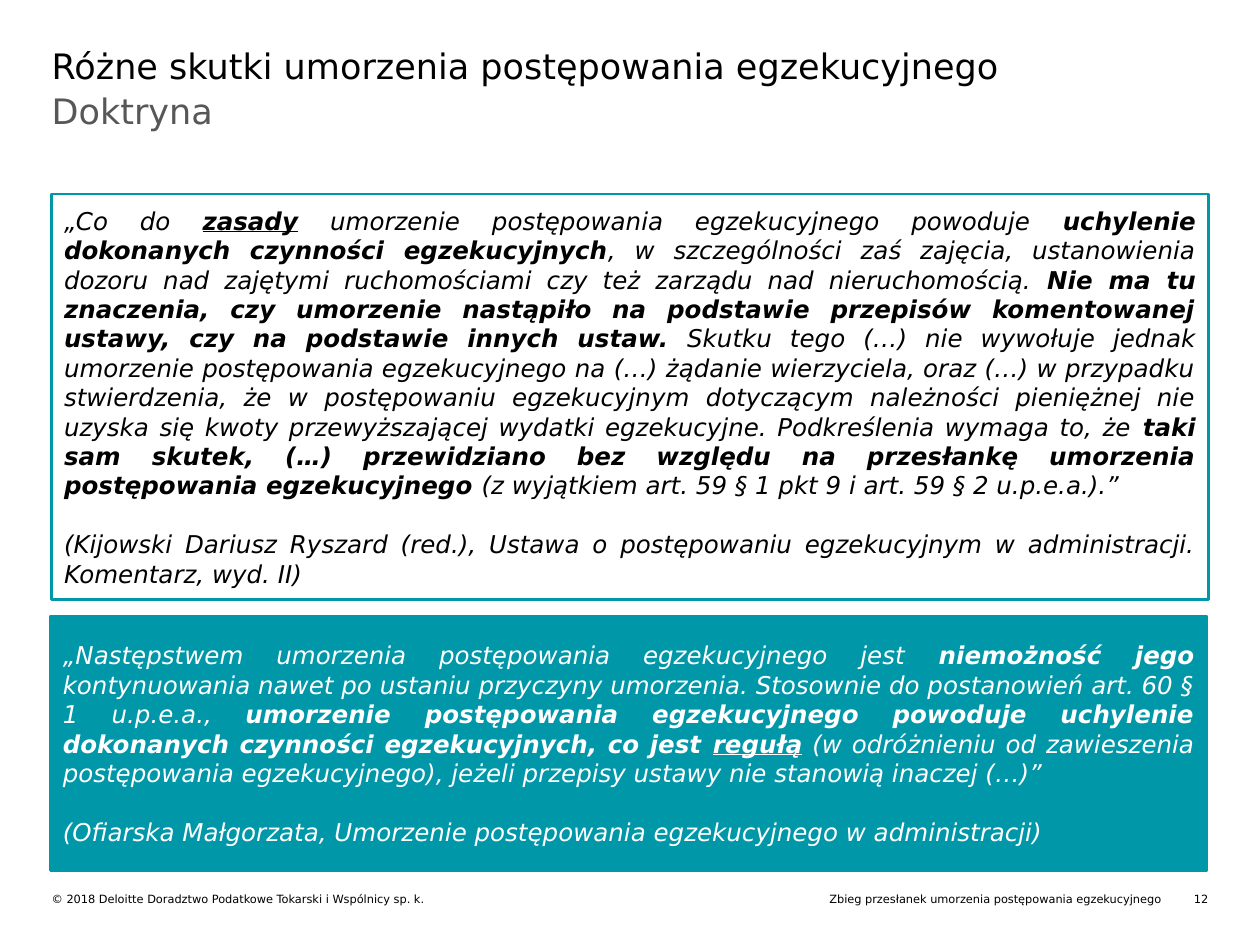
from pptx import Presentation
from pptx.dml.color import RGBColor
from pptx.enum.shapes import MSO_SHAPE
from pptx.enum.text import MSO_ANCHOR, MSO_AUTO_SIZE, PP_ALIGN
from pptx.util import Inches, Pt

PROCESS = MSO_SHAPE.FLOWCHART_PROCESS
TOP, MIDDLE = MSO_ANCHOR.TOP, MSO_ANCHOR.MIDDLE
LEFT, RIGHT, JUSTIFY = PP_ALIGN.LEFT, PP_ALIGN.RIGHT, PP_ALIGN.JUSTIFY

THEME = {
    "font": "DejaVu Sans",
    "black": RGBColor(0x00, 0x00, 0x00),
    "grey": RGBColor(0x57, 0x57, 0x57),
    "white": RGBColor(0xFF, 0xFF, 0xFF),
    "teal": RGBColor(0x00, 0x97, 0xA9),
    "heading": Pt(20),
    "quote": Pt(14),
    "footer": Pt(6.5),
    "source_gap": Pt(16.8),
    "border": Pt(1.5),
}

TITLE = "Różne skutki umorzenia postępowania egzekucyjnego"
SUBTITLE = "Doktryna"

PLAIN, BOLD, KEY = "plain", "bold", "key"
QUOTES = [
    {
        "at": (0.41, 1.54, 9.18, 3.22),
        "fill": None,
        "color": "black",
        "quote": [
            ("„Co do ", PLAIN),
            ("zasady", KEY),
            (" umorzenie postępowania egzekucyjnego powoduje ", PLAIN),
            ("uchylenie dokonanych czynności egzekucyjnych", BOLD),
            (", w szczególności zaś zajęcia, ustanowienia dozoru nad zajętymi "
             "ruchomościami czy też zarządu nad nieruchomością. ", PLAIN),
            ("Nie ma tu znaczenia, czy umorzenie nastąpiło na podstawie przepisów "
             "komentowanej ustawy, czy na podstawie innych ustaw.", BOLD),
            (" Skutku tego (…) nie wywołuje jednak umorzenie postępowania "
             "egzekucyjnego na (…) żądanie wierzyciela, oraz (…) w przypadku "
             "stwierdzenia, że w postępowaniu egzekucyjnym dotyczącym należności "
             "pieniężnej nie uzyska się kwoty przewyższającej wydatki egzekucyjne. "
             "Podkreślenia wymaga to, że ", PLAIN),
            ("taki sam skutek, (…) przewidziano bez względu na przesłankę "
             "umorzenia postępowania egzekucyjnego ", BOLD),
            ("(z wyjątkiem art. 59 § 1 pkt 9 i art. 59 § 2 u.p.e.a.).”", PLAIN),
        ],
        "source": "(Kijowski Dariusz Ryszard (red.), Ustawa o postępowaniu "
                  "egzekucyjnym w administracji. Komentarz, wyd. II)",
    },
    {
        "at": (0.4, 4.89, 9.18, 2.02),
        "fill": "teal",
        "color": "white",
        "quote": [
            ("„Następstwem umorzenia postępowania egzekucyjnego jest ", PLAIN),
            ("niemożność jego ", BOLD),
            ("kontynuowania nawet po ustaniu przyczyny umorzenia. Stosownie do "
             "postanowień art. 60 § 1 u.p.e.a., ", PLAIN),
            ("umorzenie postępowania egzekucyjnego powoduje uchylenie dokonanych "
             "czynności egzekucyjnych, co jest ", BOLD),
            ("regułą", KEY),
            (" (w odróżnieniu od zawieszenia postępowania egzekucyjnego), jeżeli "
             "przepisy ustawy nie stanowią inaczej (…)”", PLAIN),
        ],
        "source": "(Ofiarska Małgorzata, Umorzenie postępowania egzekucyjnego "
                  "w administracji)",
    },
]

FOOTERS = [
    ("© 2018 Deloitte Doradztwo Podatkowe Tokarski i Wspólnicy sp. k.",
     (0.41, 7.08, 4.39, 0.11), LEFT),
    ("Zbieg przesłanek umorzenia postępowania egzekucyjnego",
     (5.2, 7.08, 4.02, 0.11), RIGHT),
    ("12", (9.34, 7.08, 0.25, 0.11), RIGHT),
]


def set_frame(frame, inset, anchor):
    frame.word_wrap = True
    frame.auto_size = MSO_AUTO_SIZE.NONE
    frame.vertical_anchor = anchor
    frame.margin_left = frame.margin_right = Inches(inset)
    frame.margin_top = frame.margin_bottom = Inches(inset)


def style(paragraph, size, color, align):
    paragraph.alignment = align
    paragraph.font.name = THEME["font"]
    paragraph.font.size = THEME[size]
    paragraph.font.color.rgb = THEME[color]


def fill_line(holder, text, size, color, align=LEFT):
    frame = holder.text_frame
    set_frame(frame, 0, TOP)
    frame.text = text
    style(frame.paragraphs[0], size, color, align)


def add_line(slide, text, at, size, color, align=LEFT):
    holder = slide.shapes.add_textbox(*map(Inches, at))
    fill_line(holder, text, size, color, align)


def add_quote(slide, item):
    panel = slide.shapes.add_shape(PROCESS, *map(Inches, item["at"]))
    panel.shadow.inherit = False
    panel.line.color.rgb = THEME["teal"]
    panel.line.width = THEME["border"]
    if item["fill"]:
        panel.fill.solid()
        panel.fill.fore_color.rgb = THEME[item["fill"]]
    else:
        panel.fill.background()

    frame = panel.text_frame
    set_frame(frame, 0.1, MIDDLE)
    quote, source = frame.paragraphs[0], frame.add_paragraph()
    for text, emphasis in item["quote"]:
        run = quote.add_run()
        run.text = text
        if emphasis != PLAIN:
            run.font.bold = True
        if emphasis == KEY:
            run.font.underline = True
    source.text = item["source"]
    source.space_before = THEME["source_gap"]
    for paragraph in (quote, source):
        style(paragraph, "quote", item["color"], JUSTIFY)
        paragraph.font.italic = True


def main():
    deck = Presentation()
    deck.slide_width, deck.slide_height = Inches(10), Inches(7.5)
    slide = deck.slides.add_slide(deck.slide_layouts[5])

    title = slide.shapes.title
    title.left, title.top = Inches(0.41), Inches(0.35)
    title.width, title.height = Inches(9.19), Inches(0.76)
    fill_line(title, TITLE, "heading", "black")
    add_line(slide, SUBTITLE, (0.41, 0.71, 9.19, 0.83), "heading", "grey")

    for item in QUOTES:
        add_quote(slide, item)
    for text, at, align in FOOTERS:
        add_line(slide, text, at, "footer", "black", align)

    deck.save("out.pptx")


if __name__ == "__main__":
    main()
